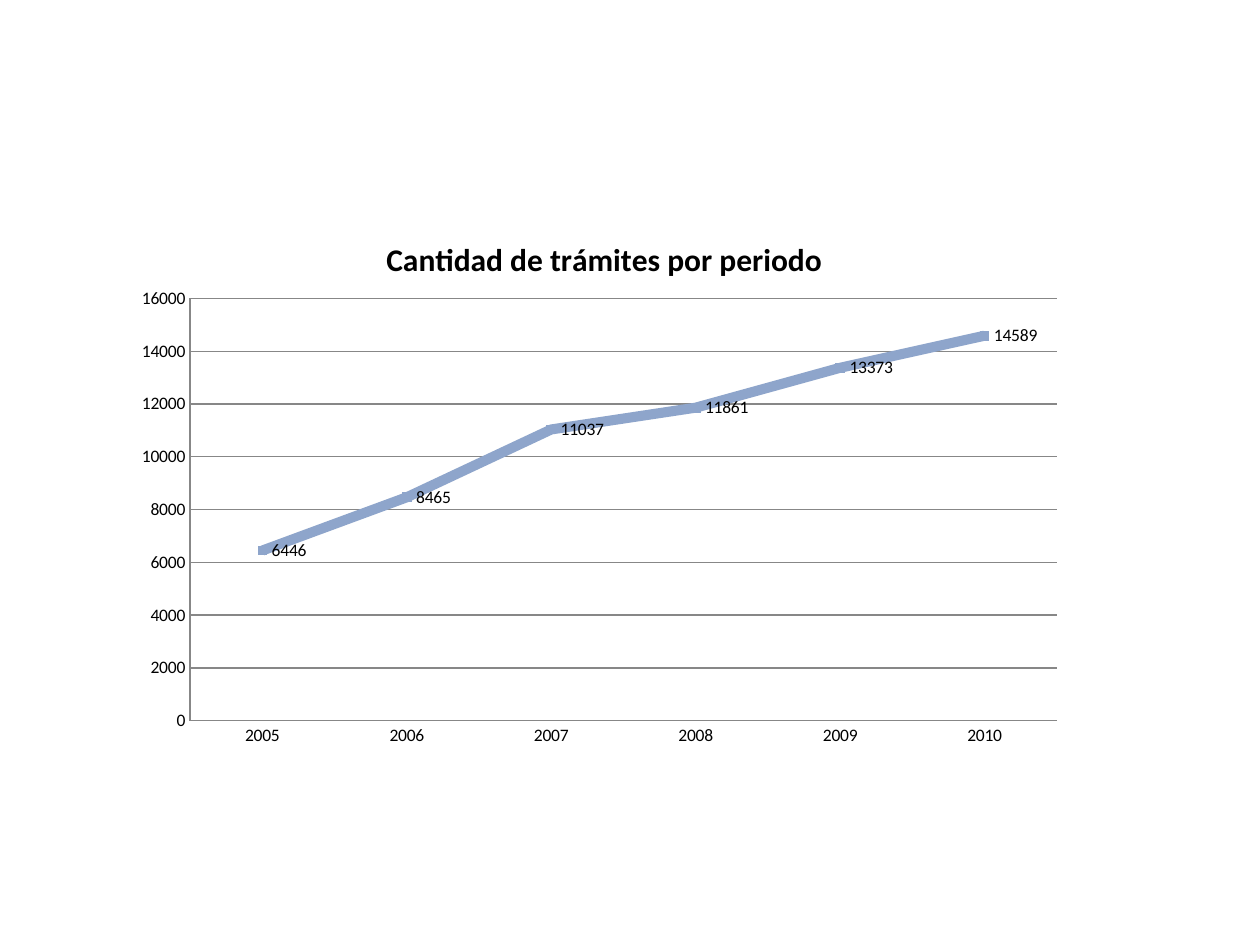
from lxml import etree
from pptx import Presentation
from pptx.chart.data import CategoryChartData
from pptx.dml.color import RGBColor
from pptx.enum import chart as ch
from pptx.oxml.ns import qn
from pptx.util import Inches, Pt

BLUE, GREY, BLACK = "8EA5CB", "878787", "000000"
PROCEDURES = {"2005": 6446, "2006": 8465, "2007": 11037,
              "2008": 11861, "2009": 13373, "2010": 14589}


def rgb(code: str) -> RGBColor:
    return RGBColor.from_string(code)


def set_font(font, size: float, bold: bool = False) -> None:
    values = {"name": "Calibri", "size": Pt(size), "bold": bold}
    for attribute, value in values.items():
        setattr(font, attribute, value)
    font.color.rgb = rgb(BLACK)


def set_line(line, color: str, width: float) -> None:
    line.color.rgb = rgb(color)
    line.width = Pt(width)


def place(parent, before: str, **settings) -> None:
    """Give a chart part a manual layout, as fractions of the chart."""
    for old in parent.findall(qn("c:layout")):
        parent.remove(old)
    layout = etree.Element(qn("c:layout"))
    manual = etree.SubElement(layout, qn("c:manualLayout"))
    for tag, value in settings.items():
        etree.SubElement(manual, qn(f"c:{tag}")).set("val", str(value))
    parent.find(qn(before)).addprevious(layout)


def add_procedures_chart(slide) -> None:
    data = CategoryChartData()
    data.categories = list(PROCEDURES)
    data.add_series("Series 1", list(PROCEDURES.values()))
    chart = slide.shapes.add_chart(
        ch.XL_CHART_TYPE.LINE_MARKERS, Inches(0.98), Inches(1.62),
        Inches(7.56), Inches(4.41), data).chart
    chart.has_legend = False
    set_font(chart.font, 10)

    chart.has_title = True
    title = chart.chart_title
    title.include_in_layout = False
    title.text_frame.text = "Cantidad de trámites por periodo"
    set_font(title.text_frame.paragraphs[0].runs[0].font, 18, bold=True)
    place(title._element, "c:overlay", xMode="edge", yMode="edge", x=0.27, y=0.05)
    plot_area = chart._chartSpace.chart.plotArea
    place(plot_area, "c:lineChart", layoutTarget="inner", xMode="edge",
          yMode="edge", x=0.07, y=0.17, w=0.91, h=0.76)

    for axis in (chart.category_axis, chart.value_axis):
        axis.major_tick_mark = axis.minor_tick_mark = ch.XL_TICK_MARK.NONE
        set_line(axis.format.line, GREY, 0.75)
    scale = {"minimum_scale": 0, "maximum_scale": 16000, "major_unit": 2000,
             "has_major_gridlines": True}
    for attribute, value in scale.items():
        setattr(chart.value_axis, attribute, value)
    set_line(chart.value_axis.major_gridlines.format.line, GREY, 0.75)

    plot = chart.plots[0]
    plot.vary_by_categories = False
    procedures = plot.series[0]
    procedures.smooth = False
    set_line(procedures.format.line, BLUE, 5.75)
    marker = procedures.marker
    marker.style, marker.size = ch.XL_MARKER_STYLE.SQUARE, 5
    marker.format.fill.solid()
    marker.format.fill.fore_color.rgb = rgb(BLUE)
    set_line(marker.format.line, BLUE, 0.75)

    labels = procedures.data_labels
    labels.show_value = True
    labels.position = ch.XL_LABEL_POSITION.RIGHT
    set_font(labels.font, 10)


def main() -> None:
    deck = Presentation()
    deck.slide_width, deck.slide_height = Inches(10), Inches(7.5)
    add_procedures_chart(deck.slides.add_slide(deck.slide_layouts[6]))
    deck.save("out.pptx")


if __name__ == "__main__":
    main()
